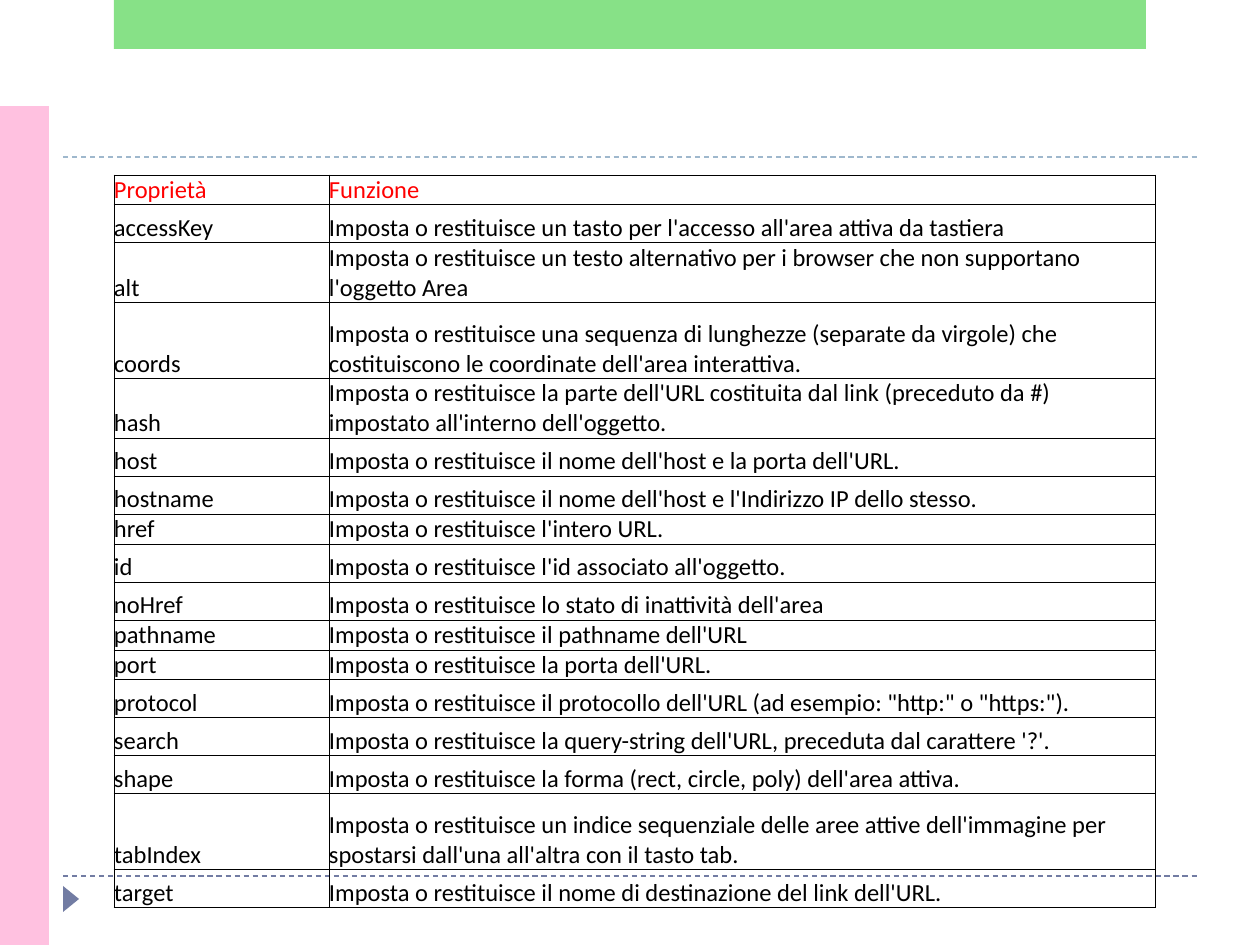
import dataclasses

import lxml.etree
import pptx
import pptx.dml.color
import pptx.enum.dml
import pptx.enum.shapes
import pptx.enum.text
import pptx.oxml.ns
import pptx.util

PX = pptx.util.Inches(1) / 126
SHAPE = pptx.enum.shapes.MSO_SHAPE

COLORS = {
    "background": "FFFFFF",
    "lower_rule": "727CA3",
    "upper_rule": "9FB8CD",
    "side_bar": "FFC1E0",
    "top_bar": "62D862",
    "header": "FF0000",
    "text": "000000",
    "border": "000000",
}


@dataclasses.dataclass
class Rule:
    y: int
    color: str


@dataclasses.dataclass
class Block:
    kind: int
    left: int
    top: int
    width: int
    height: int
    color: str
    rotation: int = 0
    opacity: int = 100


@dataclasses.dataclass
class Row:
    name: str
    purpose: str
    units: int = 2  # minimum height, in multiples of ROW_UNIT
    color: str = "text"


RULES = [Rule(876, "lower_rule"), Rule(157, "upper_rule")]

BLOCKS = [
    Block(SHAPE.ISOSCELES_TRIANGLE, 58, 891, 26, 16, "lower_rule", rotation=90),
    Block(SHAPE.RECTANGLE, 0, 106, 49, 839, "side_bar"),
    Block(SHAPE.RECTANGLE, 114, 0, 1032, 49, "top_bar", opacity=76),
]

ROW_UNIT = 19
COLUMN_WIDTHS = [215, 826]
ROWS = [
    Row("Proprietà", "Funzione", 1, "header"),
    Row("accessKey", "Imposta o restituisce un tasto per l'accesso all'area attiva da tastiera"),
    Row("alt", "Imposta o restituisce un testo alternativo per i browser che non supportano "
        "l'oggetto Area", 3),
    Row("coords", "Imposta o restituisce una sequenza di lunghezze (separate da virgole) che "
        "costituiscono le coordinate dell'area interattiva.", 4),
    Row("hash", "Imposta o restituisce la parte dell'URL costituita dal link (preceduto da #) "
        "impostato all'interno dell'oggetto.", 3),
    Row("host", "Imposta o restituisce il nome dell'host e la porta dell'URL."),
    Row("hostname", "Imposta o restituisce il nome dell'host e l'Indirizzo IP dello stesso."),
    Row("href", "Imposta o restituisce l'intero URL.", 1),
    Row("id", "Imposta o restituisce l'id associato all'oggetto."),
    Row("noHref", "Imposta o restituisce lo stato di inattività dell'area"),
    Row("pathname", "Imposta o restituisce il pathname dell'URL", 1),
    Row("port", "Imposta o restituisce la porta dell'URL.", 1),
    Row("protocol", "Imposta o restituisce il protocollo dell'URL "
        "(ad esempio: \"http:\" o \"https:\")."),
    Row("search", "Imposta o restituisce la query-string dell'URL, preceduta dal carattere '?'."),
    Row("shape", "Imposta o restituisce la forma (rect, circle, poly) dell'area attiva."),
    Row("tabIndex", "Imposta o restituisce un indice sequenziale delle aree attive "
        "dell'immagine per spostarsi dall'una all'altra con il tasto tab.", 4),
    Row("target", "Imposta o restituisce il nome di destinazione del link dell'URL."),
]


def emu(pixels: int) -> int:
    return round(pixels * PX)


def rgb(name: str) -> pptx.dml.color.RGBColor:
    return pptx.dml.color.RGBColor.from_string(COLORS[name])


def add_child(parent, tag: str, **attributes: str):
    return lxml.etree.SubElement(parent, pptx.oxml.ns.qn(tag), attributes)


def draw_rule(slide, rule: Rule) -> None:
    connector = slide.shapes.add_connector(
        pptx.enum.shapes.MSO_CONNECTOR.STRAIGHT,
        emu(63), emu(rule.y), emu(1197), emu(rule.y))
    connector.line.color.rgb = rgb(rule.color)
    connector.line.width = pptx.util.Pt(0.75)
    connector.line.dash_style = pptx.enum.dml.MSO_LINE.DASH
    add_child(connector._element.spPr, "a:effectLst")


def draw_block(slide, block: Block) -> None:
    shape = slide.shapes.add_shape(
        block.kind, emu(block.left), emu(block.top), emu(block.width), emu(block.height))
    shape.rotation = block.rotation
    shape.shadow.inherit = False
    shape.line.fill.background()
    shape.fill.solid()
    shape.fill.fore_color.rgb = rgb(block.color)
    if block.opacity < 100:
        color = shape._element.spPr.find(".//" + pptx.oxml.ns.qn("a:srgbClr"))
        add_child(color, "a:alpha", val=str(block.opacity * 1000))


def add_borders(cell) -> None:
    properties = cell._tc.get_or_add_tcPr()
    for side in ("L", "R", "T", "B"):
        line = add_child(properties, f"a:ln{side}", w=str(pptx.util.Pt(0.5)))
        add_child(add_child(line, "a:solidFill"), "a:srgbClr", val=COLORS["border"])


def fill_cell(cell, text: str, color: str) -> None:
    add_borders(cell)
    cell.fill.background()
    cell.margin_left = cell.margin_right = cell.margin_top = cell.margin_bottom = 0
    cell.vertical_anchor = pptx.enum.text.MSO_ANCHOR.BOTTOM
    run = cell.text_frame.paragraphs[0].add_run()
    run.text = text
    run.font.name = "Calibri"
    run.font.size = pptx.util.Pt(14)
    run.font.color.rgb = rgb(color)


def draw_table(slide, rows: list[Row]) -> None:
    height = sum(row.units for row in rows) * ROW_UNIT
    table = slide.shapes.add_table(
        len(rows), len(COLUMN_WIDTHS), emu(114), emu(175),
        emu(sum(COLUMN_WIDTHS)), emu(height)).table
    table.first_row = False
    table.horz_banding = False
    for column, width in zip(table.columns, COLUMN_WIDTHS):
        column.width = emu(width)
    for table_row, row in zip(table.rows, rows):
        table_row.height = emu(row.units * ROW_UNIT)
        for cell, text in zip(table_row.cells, (row.name, row.purpose)):
            fill_cell(cell, text, row.color)


def main() -> None:
    presentation = pptx.Presentation()
    presentation.slide_width = emu(1260)
    presentation.slide_height = emu(945)
    slide = presentation.slides.add_slide(presentation.slide_layouts[6])
    slide.background.fill.solid()
    slide.background.fill.fore_color.rgb = rgb("background")

    # Dashed rules and coloured decoration
    for rule in RULES:
        draw_rule(slide, rule)
    for block in BLOCKS:
        draw_block(slide, block)

    # Properties of the Area object
    draw_table(slide, ROWS)

    presentation.save("out.pptx")


if __name__ == "__main__":
    main()
